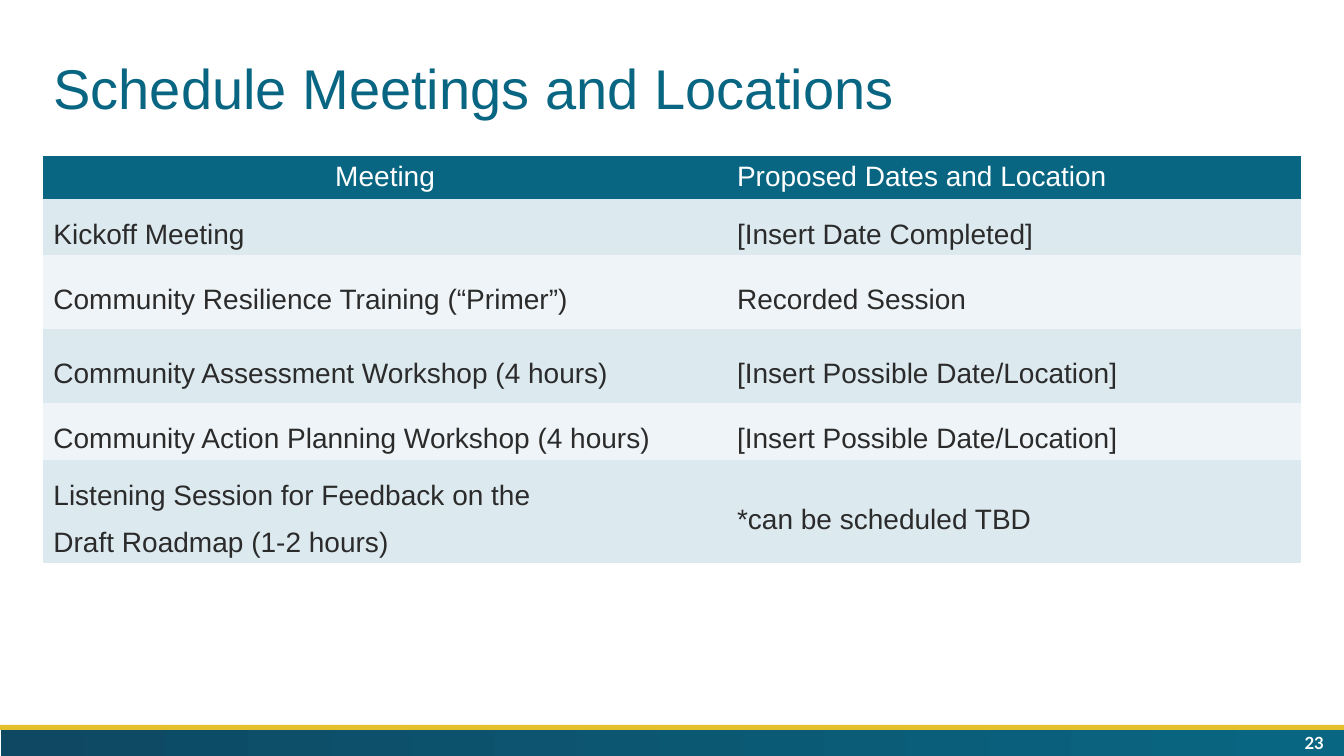
from dataclasses import dataclass

import pptx
import pptx.util
import pptx.dml.color
import pptx.enum.shapes
import pptx.enum.text
import pptx.oxml.ns

Inches = pptx.util.Inches
ALIGN = pptx.enum.text.PP_ALIGN
ANCHOR = pptx.enum.text.MSO_ANCHOR


@dataclass(frozen=True)
class Theme:
    teal: str = "096682"
    navy: str = "0E4862"
    gold: str = "E2BF2B"
    ink: str = "2B2B2B"
    white: str = "FFFFFF"
    bands: tuple = ("DCE9EF", "EEF4F7")
    font: str = "Arial"
    number_font: str = "Lato"
    title_size: int = 40
    table_size: int = 20
    number_size: int = 12


theme = Theme()
NO_GRID_STYLE = "{2D5ABB26-0587-4C30-8999-92F81FD0307C}"


def rgb(code):
    return pptx.dml.color.RGBColor.from_string(code)


def write(para, text, size, color, font=theme.font, bold=False, align=ALIGN.LEFT):
    para.text = text
    para.alignment = align
    for span in para.runs:
        span.font.name = font
        span.font.size = pptx.util.Pt(size)
        span.font.bold = bold
        span.font.color.rgb = rgb(color)


deck = pptx.Presentation()
deck.slide_width = Inches(13.33)
deck.slide_height = Inches(7.5)
page = deck.slides.add_slide(deck.slide_layouts[5])

# Footer band: teal gradient below a gold rule
footer_bars = []
for left, top, height in ((0.01, 7.24, 0.28), (0, 7.19, 0.05)):
    bar = page.shapes.add_shape(
        pptx.enum.shapes.MSO_SHAPE.RECTANGLE,
        Inches(left), Inches(top), Inches(13.33), Inches(height))
    bar.shadow.inherit = False
    bar.line.fill.background()
    footer_bars.append(bar)
footer_band, gold_rule = footer_bars
gold_rule.fill.solid()
gold_rule.fill.fore_color.rgb = rgb(theme.gold)
footer_band.fill.gradient()
footer_band.fill.gradient_angle = 0
gradient_stops = ((0, theme.navy), (0.98, theme.teal))
for stop, (position, color) in zip(footer_band.fill.gradient_stops, gradient_stops):
    stop.position = position
    stop.color.rgb = rgb(color)

# Title
title = page.shapes.title
title.left, title.top = Inches(0.43), Inches(0.54)
title.width, title.height = Inches(12.51), Inches(0.73)
title.text_frame.auto_size = pptx.enum.text.MSO_AUTO_SIZE.NONE
title.text_frame.vertical_anchor = ANCHOR.MIDDLE
heading = title.text_frame.paragraphs[0]
write(heading, "Schedule Meetings and Locations", theme.title_size, theme.teal)
heading.line_spacing = 0.9

# Meeting schedule
schedule = (
    ("Meeting", "Proposed Dates and Location"),
    ("Kickoff Meeting", "[Insert Date Completed]"),
    ("Community Resilience Training (“Primer”)", "Recorded Session"),
    ("Community Assessment Workshop (4 hours)", "[Insert Possible Date/Location]"),
    ("Community Action Planning Workshop (4 hours)", "[Insert Possible Date/Location]"),
    ("Listening Session for Feedback on the\nDraft Roadmap (1-2 hours)",
     "*can be scheduled TBD"),
)
column_widths = (6.78, 5.69)
row_heights = (0.42, 0.56, 0.73, 0.73, 0.56, 1.03)

frame = page.shapes.add_table(
    len(schedule), len(column_widths), Inches(0.43), Inches(1.55),
    Inches(sum(column_widths)), Inches(sum(row_heights)))
table = frame.table
style = frame.element.find(".//" + pptx.oxml.ns.qn("a:tableStyleId"))
style.text = NO_GRID_STYLE
for column, width in zip(table.columns, column_widths):
    column.width = Inches(width)

for row_index, (height, texts) in enumerate(zip(row_heights, schedule)):
    table.rows[row_index].height = Inches(height)
    is_header = row_index == 0
    for column_index, text in enumerate(texts):
        cell = table.cell(row_index, column_index)
        cell.fill.solid()
        cell.fill.fore_color.rgb = rgb(
            theme.teal if is_header else theme.bands[(row_index - 1) % 2])
        para = cell.text_frame.paragraphs[0]
        if is_header:
            align = ALIGN.CENTER if column_index == 0 else ALIGN.LEFT
            write(para, text, theme.table_size, theme.white, align=align)
        else:
            cell.vertical_anchor = ANCHOR.MIDDLE
            write(para, text, theme.table_size, theme.ink)
            para.line_spacing = 1.5

# Page number
number_box = page.shapes.add_textbox(Inches(10.23), Inches(7.24), Inches(3), Inches(0.26))
number_box.text_frame.word_wrap = True
number_box.text_frame.vertical_anchor = ANCHOR.MIDDLE
write(number_box.text_frame.paragraphs[0], "23", theme.number_size, theme.white,
      font=theme.number_font, bold=True, align=ALIGN.RIGHT)

deck.save("out.pptx")
